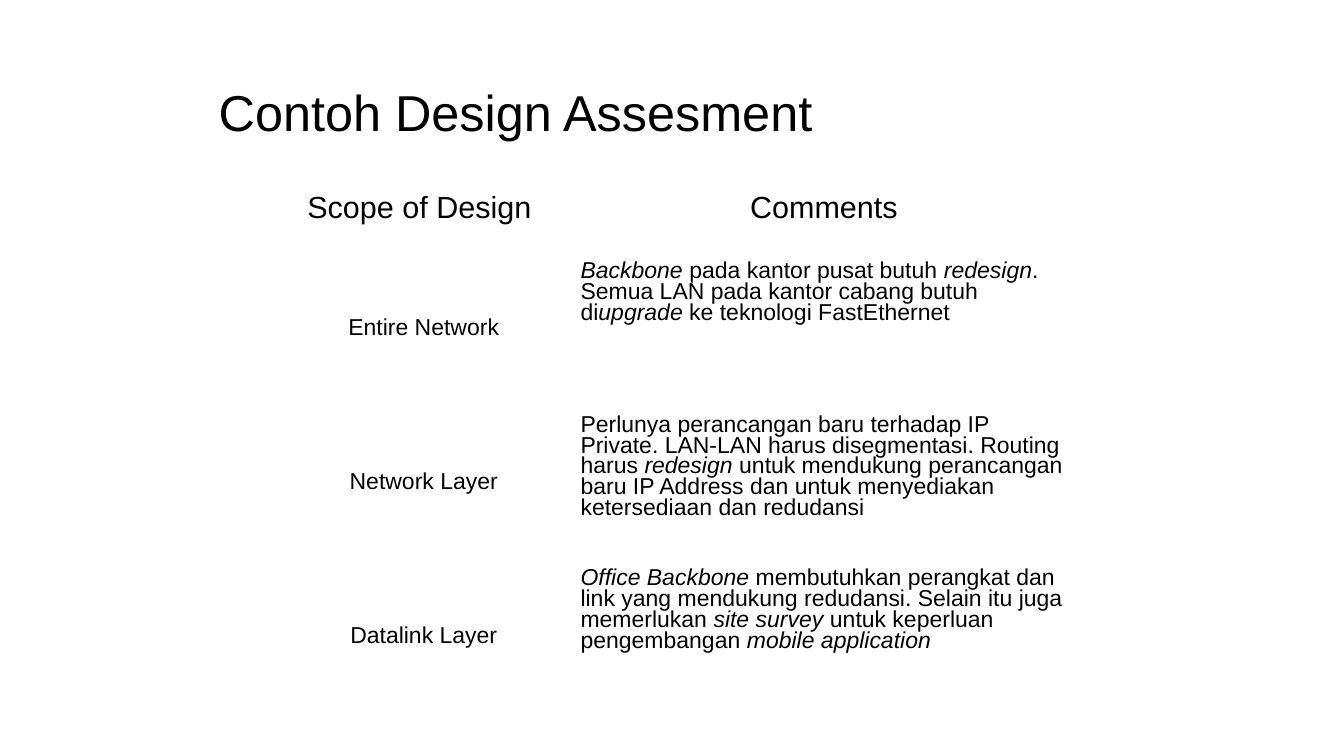
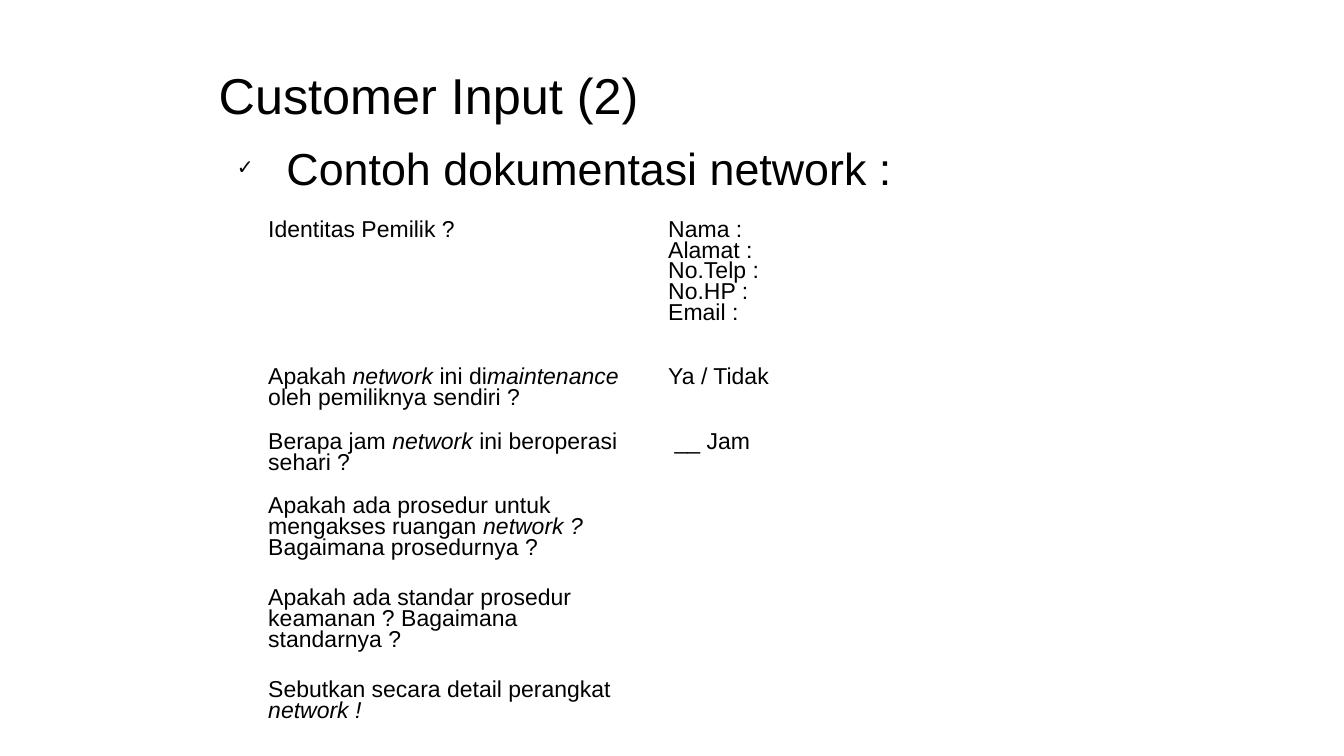
from lxml.etree import SubElement
from pptx import Presentation
from pptx.dml.color import RGBColor
from pptx.enum.text import MSO_ANCHOR, MSO_AUTO_SIZE, PP_ALIGN
from pptx.oxml.ns import qn
from pptx.util import Cm, Pt


def tint(code):
    return RGBColor.from_string(code)


class Deck:
    face = "Arial"
    ink = "000000"
    paper = "FFFFFF"
    left = 5.51
    width = 22.83

    def __init__(self):
        self.show = Presentation()
        self.show.slide_width = Cm(33.87)
        self.show.slide_height = Cm(19.05)
        self.slide = None

    def fill_runs(self, para, text, size):
        for spot, part in enumerate(text.split("*")):
            if part:
                run = para.add_run()
                run.text = part
                font = run.font
                font.name = self.face
                font.size = Pt(size)
                font.italic = spot % 2 == 1
                font.color.rgb = tint(self.ink)

    def frame(self, shape):
        frame = shape.text_frame
        frame.word_wrap = True
        frame.auto_size = MSO_AUTO_SIZE.NONE
        frame.margin_left = frame.margin_right = 0
        frame.margin_top = frame.margin_bottom = 0
        return frame

    def title(self, text, top, height):
        self.slide = self.show.slides.add_slide(self.show.slide_layouts[5])
        fill = self.slide.background.fill
        fill.solid()
        fill.fore_color.rgb = tint(self.paper)
        shape = self.slide.shapes.title
        shape.left, shape.top = Cm(self.left), Cm(top)
        shape.width, shape.height = Cm(self.width), Cm(height)
        frame = self.frame(shape)
        frame.vertical_anchor = MSO_ANCHOR.MIDDLE
        para = frame.paragraphs[0]
        para.alignment = PP_ALIGN.LEFT
        self.fill_runs(para, text, 36)

    def bullet(self, text, left, top, width, height):
        box = self.slide.shapes.add_textbox(
            Cm(left), Cm(top), Cm(width), Cm(height))
        para = self.frame(box).paragraphs[0]
        props = para._p.get_or_add_pPr()
        props.set("marL", str(Cm(1.25)))
        props.set("indent", str(-Cm(1.25)))
        SubElement(props, qn("a:buSzPct")).set("val", "45000")
        SubElement(props, qn("a:buFont")).set("typeface", self.face)
        SubElement(props, qn("a:buChar")).set("char", "✓")
        self.fill_runs(para, text, 32)

    def cell(self, cell, text, size, top, mid):
        cell.fill.solid()
        cell.fill.fore_color.rgb = tint(self.paper)
        cell.margin_left = cell.margin_right = Cm(0.23)
        cell.margin_top, cell.margin_bottom = Cm(top), Cm(0.13)
        cell.vertical_anchor = MSO_ANCHOR.MIDDLE if mid else MSO_ANCHOR.TOP
        frame = cell.text_frame
        for spot, line in enumerate(text.split("\n")):
            para = frame.add_paragraph() if spot else frame.paragraphs[0]
            para.alignment = PP_ALIGN.CENTER if mid else PP_ALIGN.LEFT
            para.line_spacing = 0.81
            self.fill_runs(para, line, size)

    def table(self, left, top, wide, tall, rows, head=False):
        table = self.slide.shapes.add_table(
            len(tall), len(wide), Cm(left), Cm(top),
            Cm(sum(wide)), Cm(sum(tall))).table
        table.first_row = table.horz_banding = False
        for col, width in zip(table.columns, wide):
            col.width = Cm(width)
        for row, height in zip(table.rows, tall):
            row.height = Cm(height)
        for r, row in enumerate(rows):
            for c, text in enumerate(row):
                first = head and r == 0
                size, inset = (21.8, 0.41) if first else (16.4, 0.33)
                mid = first or (head and c == 0)
                self.cell(table.cell(r, c), text, size, inset, mid)


def main():
    deck = Deck()

    deck.title("Contoh Design Assesment", 1.22, 3.18)
    deck.table(6.96, 4.06, [7.44, 12.73], [2.21] + [3.87] * 3, [
        ("Scope of Design ", "Comments"),
        ("Entire Network",
         "*Backbone* pada kantor pusat butuh *redesign*. Semua LAN pada "
         "kantor cabang butuh di*upgrade* ke teknologi FastEthernet"),
        ("Network Layer",
         "Perlunya perancangan baru terhadap IP Private. LAN-LAN harus "
         "disegmentasi. Routing harus *redesign *untuk mendukung "
         "perancangan baru IP Address dan untuk menyediakan ketersediaan "
         "dan redudansi"),
        ("Datalink Layer",
         "*Office Backbone* membutuhkan perangkat dan link yang mendukung "
         "redudansi. Selain itu juga memerlukan *site survey *untuk "
         "keperluan pengembangan *mobile application*"),
    ], head=True)

    deck.title("Customer Input (2)", 1.32, 2.13)
    deck.bullet("Contoh dokumentasi network :", 5.97, 3.55, 21.84, 1.5)
    deck.table(6.53, 5.23, [10.08] * 2,
               [3.71, 1.63, 1.63, 2.31, 2.31, 1.63], [
        ("Identitas Pemilik ?",
         "Nama :\nAlamat :\nNo.Telp :\nNo.HP :\nEmail :"),
        ("Apakah *network *ini di*maintenance *oleh pemiliknya sendiri ?",
         "Ya / Tidak"),
        ("Berapa jam *network* ini beroperasi sehari ?", " __ Jam"),
        ("Apakah ada prosedur untuk mengakses ruangan *network ?* "
         "Bagaimana prosedurnya ?", ""),
        ("Apakah ada standar prosedur keamanan ? Bagaimana standarnya ?",
         ""),
        ("Sebutkan secara detail perangkat *network !*", ""),
    ])

    deck.show.save("out.pptx")


if __name__ == "__main__":
    main()
